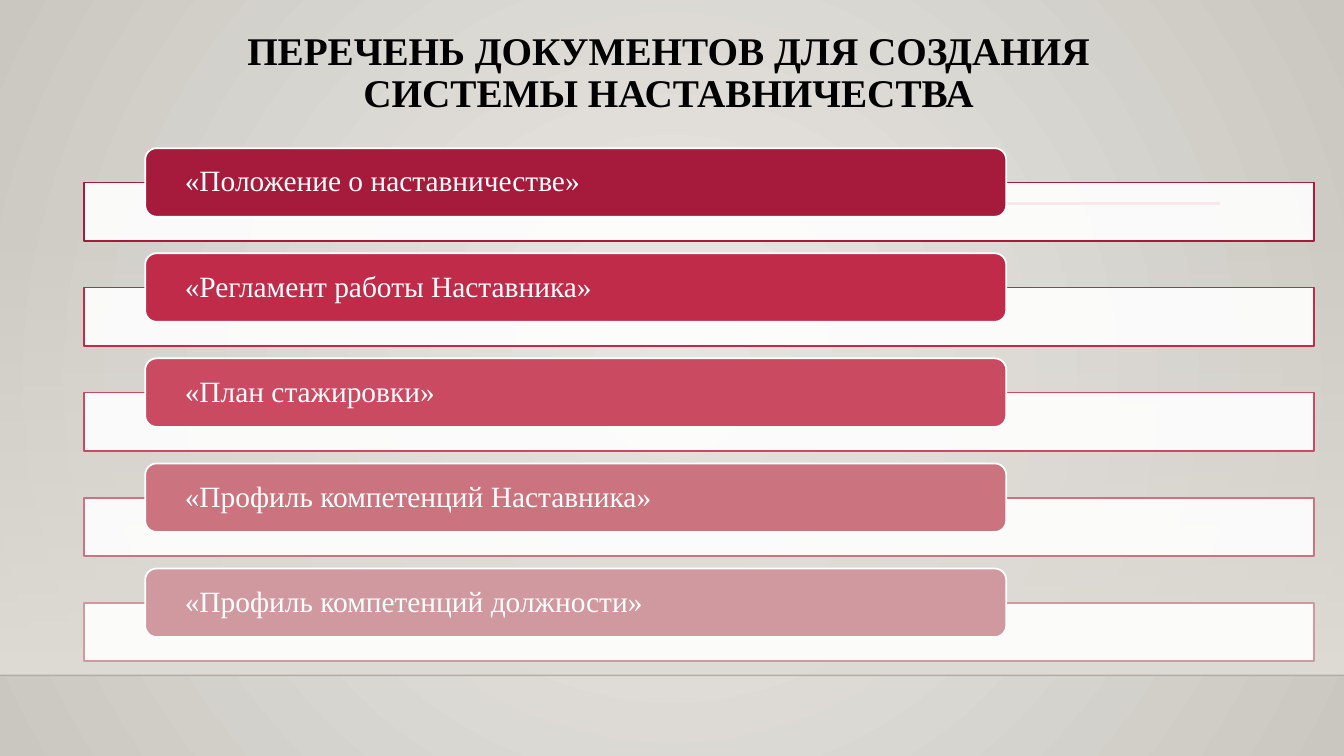
from lxml.etree import SubElement
from pptx import Presentation
from pptx.dml.color import RGBColor
from pptx.enum.shapes import MSO_CONNECTOR as CONNECTOR, MSO_SHAPE as SHAPE
from pptx.enum.text import MSO_ANCHOR as ANCHOR, PP_ALIGN as ALIGN
from pptx.oxml.ns import qn
from pptx.util import Inches, Pt


def color(value):
    return RGBColor.from_string(value)


def set_opacity(shape, percent):
    """Set the opacity of the first colour: the fill, or a connector's line."""
    first_color = shape._element.spPr.find(".//" + qn("a:srgbClr"))
    SubElement(first_color, qn("a:alpha"), val=str(percent * 1000))


deck = Presentation()
deck.slide_width, deck.slide_height = Inches(13.33), Inches(7.5)
slide = deck.slides.add_slide(deck.slide_layouts[5])

# Background: light centre fading outwards
backdrop = slide.background.fill
backdrop.gradient()
for stop, shade in zip(backdrop.gradient_stops, ("ECEAE7", "CAC7C1")):
    stop.color.rgb = color(shade)
gradient = slide.background._cSld.find(".//" + qn("a:gradFill"))
gradient.remove(gradient.find(qn("a:lin")))
circle = SubElement(gradient, qn("a:path"))
circle.set("path", "circle")
SubElement(circle, qn("a:fillToRect"), l="50000", t="50000", r="50000", b="50000")

# Wall that fades in towards the floor
wall = slide.shapes.add_shape(
    SHAPE.RECTANGLE, 0, Inches(2.21), Inches(13.33), Inches(4.49))
wall.shadow.inherit = False
wall.line.fill.background()
wall.fill.gradient()
wall.fill.gradient_angle = 270
for stop in wall.fill.gradient_stops:
    stop.color.rgb = color("DFDBD5")
set_opacity(wall, 0)

# Floor line and title rule
for left, right, y, tint, width, opacity in (
    (0, 13.33, 6.7, "000001", 1, 20),
    (1.59, 12.1, 2.02, "B71E42", 2.5, 100),
):
    rule = slide.shapes.add_connector(
        CONNECTOR.STRAIGHT, Inches(left), Inches(y), Inches(right), Inches(y))
    rule.line.color.rgb = color(tint)
    rule.line.width = Pt(width)
    set_opacity(rule, opacity)
    SubElement(rule._element.spPr, qn("a:effectLst"))

# Title
title = slide.shapes.title
title.left, title.top = Inches(1.38), Inches(0.26)
title.width, title.height = Inches(10.5), Inches(1.15)
title.text_frame.text = "ПЕРЕЧЕНЬ ДОКУМЕНТОВ ДЛЯ СОЗДАНИЯ СИСТЕМЫ НАСТАВНИЧЕСТВА"
title.text_frame.vertical_anchor = ANCHOR.TOP
heading = title.text_frame.paragraphs[0]
heading.alignment = ALIGN.CENTER
heading.line_spacing = 0.9
heading.font.color.rgb = color("000000")
for key, value in {"name": "Times New Roman", "size": Pt(28), "bold": True}.items():
    setattr(heading.font, key, value)

# Documents: a white strip with a coloured label over its top edge
documents = (
    ("«Положение о наставничестве»", "A61B3C"),
    ("«Регламент работы Наставника»", "C02B4A"),
    ("«План стажировки»", "CA4B61"),
    ("«Профиль компетенций Наставника»", "CB7480"),
    ("«Профиль компетенций должности»", "D0999F"),
)
label_format = {
    "word_wrap": True, "vertical_anchor": ANCHOR.MIDDLE,
    "margin_left": Inches(0.36), "margin_right": Inches(0.36),
    "margin_top": 0, "margin_bottom": 0,
}
first_top, row_pitch = 1.47, 1.0425

for row, (document, tint) in enumerate(documents):
    top = first_top + row * row_pitch
    strip = slide.shapes.add_shape(
        SHAPE.RECTANGLE, Inches(0.83), Inches(top + 0.34), Inches(12.2), Inches(0.58))
    label = slide.shapes.add_shape(
        SHAPE.ROUNDED_RECTANGLE, Inches(1.44), Inches(top), Inches(8.54), Inches(0.68))
    for part, fill, outline in ((strip, "FFFFFF", tint), (label, tint, "FFFFFF")):
        part.shadow.inherit = False
        part.fill.solid()
        part.fill.fore_color.rgb = color(fill)
        part.line.color.rgb = color(outline)
        part.line.width = Pt(1.25)
    set_opacity(strip, 90)

    label.text_frame.text = document
    for key, value in label_format.items():
        setattr(label.text_frame, key, value)
    name = label.text_frame.paragraphs[0]
    name.alignment = ALIGN.LEFT
    name.line_spacing = 0.9
    name.font.color.rgb = color("FFFFFF")
    name.font.name, name.font.size = "Times New Roman", Pt(21)

deck.save("out.pptx")
